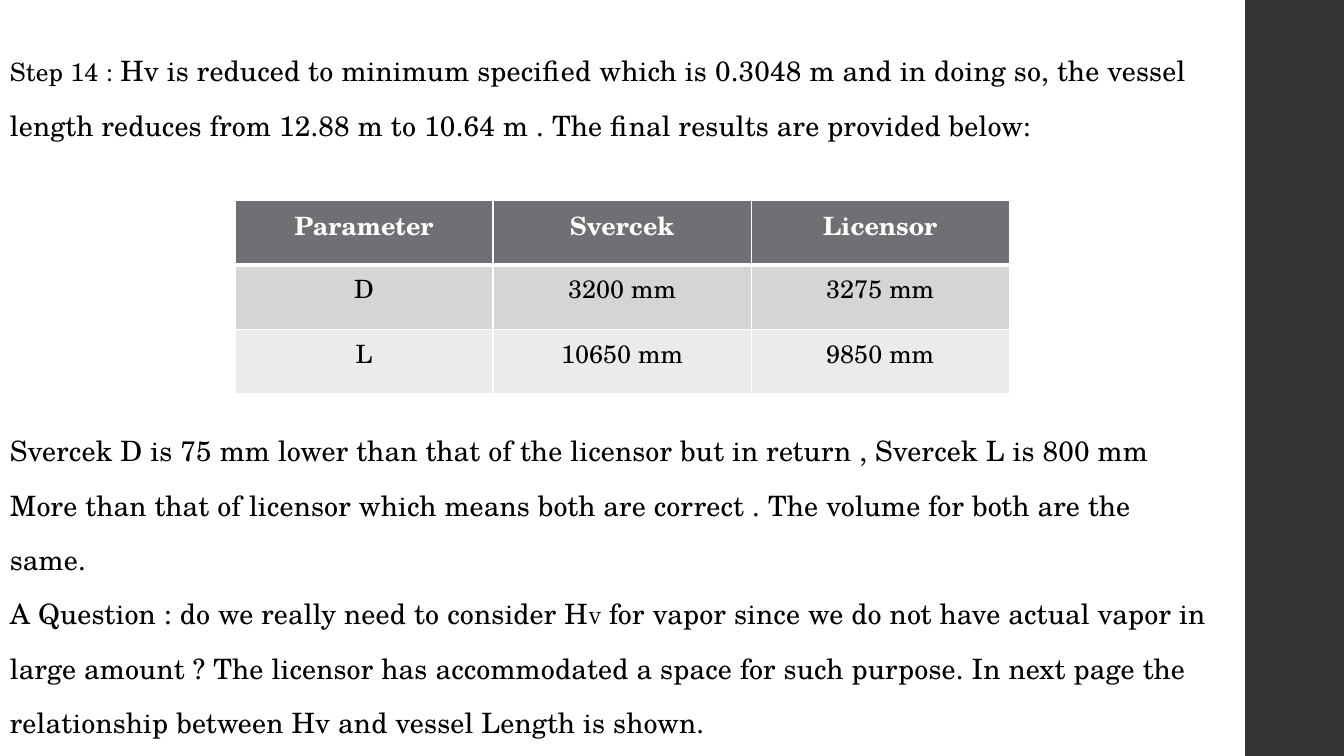
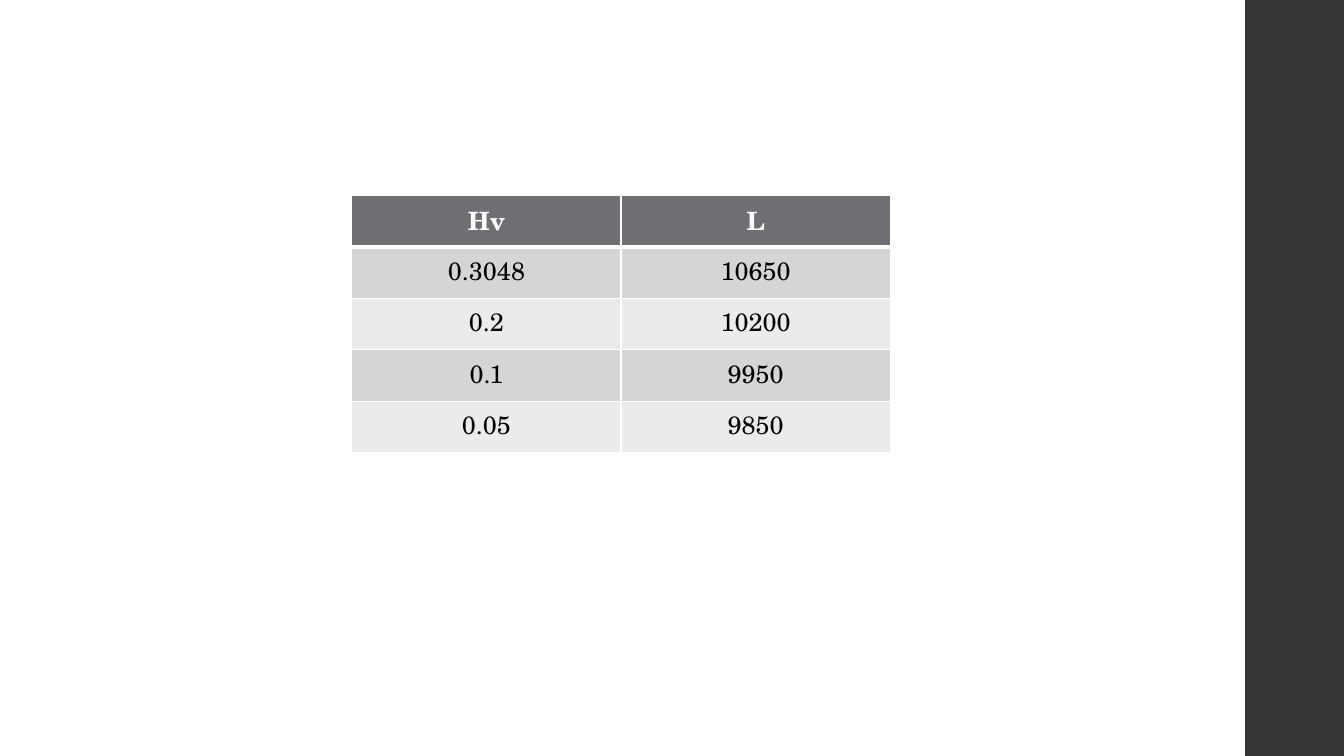
from lxml import etree
from pptx import Presentation
from pptx.dml.color import RGBColor
from pptx.enum.shapes import MSO_SHAPE
from pptx.enum.text import PP_ALIGN
from pptx.oxml.ns import qn
from pptx.util import Inches, Pt

RECT = MSO_SHAPE.RECTANGLE
CENTER = PP_ALIGN.CENTER

FONT = "TeX Gyre Schola"
BLACK = RGBColor(0x00, 0x00, 0x00)
WHITE = RGBColor(0xFF, 0xFF, 0xFF)
BAND = RGBColor(0x35, 0x35, 0x37)
HEADER = RGBColor(0x6F, 0x6F, 0x74)
ROW_FILLS = (RGBColor(0xD5, 0xD5, 0xD6), RGBColor(0xEB, 0xEB, 0xEB))

BODY_SIZE = 20
TABLE_SIZE = 18

RESULT_LINES = [
    [("Step 14 : ", 18),
     ("Hv is reduced to minimum specified which is 0.3048 m and in doing so, the vessel", BODY_SIZE)],
    [("length reduces from 12.88 m to 10.64 m . The final results are provided below:", BODY_SIZE)],
]
DISCUSSION_LINES = [
    [("Svercek D is 75 mm lower than that of the licensor but in return , Svercek L is 800 mm", BODY_SIZE)],
    [("More than that of licensor which means both are correct . The volume for both are the", BODY_SIZE)],
    [("same.", BODY_SIZE)],
    [("A Question : do we really need to consider H", BODY_SIZE), ("V", 12),
     (" for vapor since we do not have actual vapor in", BODY_SIZE)],
    [("large amount ? The licensor has accommodated a space for such purpose. In next page the", BODY_SIZE)],
    [("relationship between Hv and vessel Length is shown.", BODY_SIZE)],
]
SIZE_ROWS = [
    ("Parameter", "Svercek", "Licensor"),
    ("D", "3200 mm", "3275 mm"),
    ("L", "10650 mm", "9850 mm"),
]
LENGTH_ROWS = [
    ("Hv", "L"),
    ("0.3048", "10650"),
    ("0.2", "10200"),
    ("0.1", "9950"),
    ("0.05", "9850"),
]


def add_slide(prs):
    slide = prs.slides.add_slide(prs.slide_layouts[6])
    sp = slide.shapes.add_shape(RECT, Inches(12.35), 0, Inches(1), prs.slide_height)
    sp.shadow.inherit = False
    sp.fill.solid()
    sp.fill.fore_color.rgb = BAND
    sp.line.fill.background()
    return slide


def style_font(font, size, color, bold=False):
    font.name = FONT
    font.size = Pt(size)
    font.color.rgb = color
    font.bold = bold


def add_body(slide, top, height, lines):
    sp = slide.shapes.add_textbox(0, Inches(top), Inches(12.34), Inches(height))
    tf = sp.text_frame
    tf.word_wrap = True
    for i, runs in enumerate(lines):
        p = tf.add_paragraph() if i else tf.paragraphs[0]
        p.line_spacing = 0.95
        p.space_before = Pt(14)
        p.space_after = Pt(2)
        style_font(p.font, BODY_SIZE, BLACK)
        for text, size in runs:
            r = p.add_run()
            r.text = text
            if size != BODY_SIZE:
                r.font.size = Pt(size)
            r._r.get_or_add_rPr().set("spc", "10")


def set_borders(cell, top, bottom):
    tc_pr = cell._tc.get_or_add_tcPr()
    for tag, width in (("a:lnL", 1), ("a:lnR", 1), ("a:lnT", top), ("a:lnB", bottom)):
        ln = etree.SubElement(tc_pr, qn(tag), w=str(Pt(width)))
        fill = etree.SubElement(ln, qn("a:solidFill"))
        etree.SubElement(fill, qn("a:srgbClr"), val=str(WHITE))


def add_table(slide, left, top, col_width, row_height, rows):
    n_rows, n_cols = len(rows), len(rows[0])
    table = slide.shapes.add_table(
        n_rows, n_cols, Inches(left), Inches(top),
        Inches(col_width * n_cols), Inches(row_height * n_rows)).table
    for col in table.columns:
        col.width = Inches(col_width)
    for i, values in enumerate(rows):
        is_header = i == 0
        table.rows[i].height = Inches(row_height)
        for j, value in enumerate(values):
            cell = table.cell(i, j)
            set_borders(cell, top=3 if i == 1 else 1, bottom=3 if is_header else 1)
            cell.fill.solid()
            cell.fill.fore_color.rgb = HEADER if is_header else ROW_FILLS[(i - 1) % 2]
            p = cell.text_frame.paragraphs[0]
            p.text = value
            p.alignment = CENTER
            style_font(p.font, TABLE_SIZE, WHITE if is_header else BLACK, is_header)


def main():
    prs = Presentation()
    prs.slide_width = Inches(13.33)
    prs.slide_height = Inches(7.5)

    slide = add_slide(prs)
    add_body(slide, 0.51, 1.2, RESULT_LINES)
    add_table(slide, 2.33, 1.99, 2.56, 0.64, SIZE_ROWS)
    add_body(slide, 4.28, 3.2, DISCUSSION_LINES)

    slide = add_slide(prs)
    add_table(slide, 3.49, 1.94, 2.67, 0.51, LENGTH_ROWS)

    prs.save("out.pptx")


if __name__ == "__main__":
    main()
